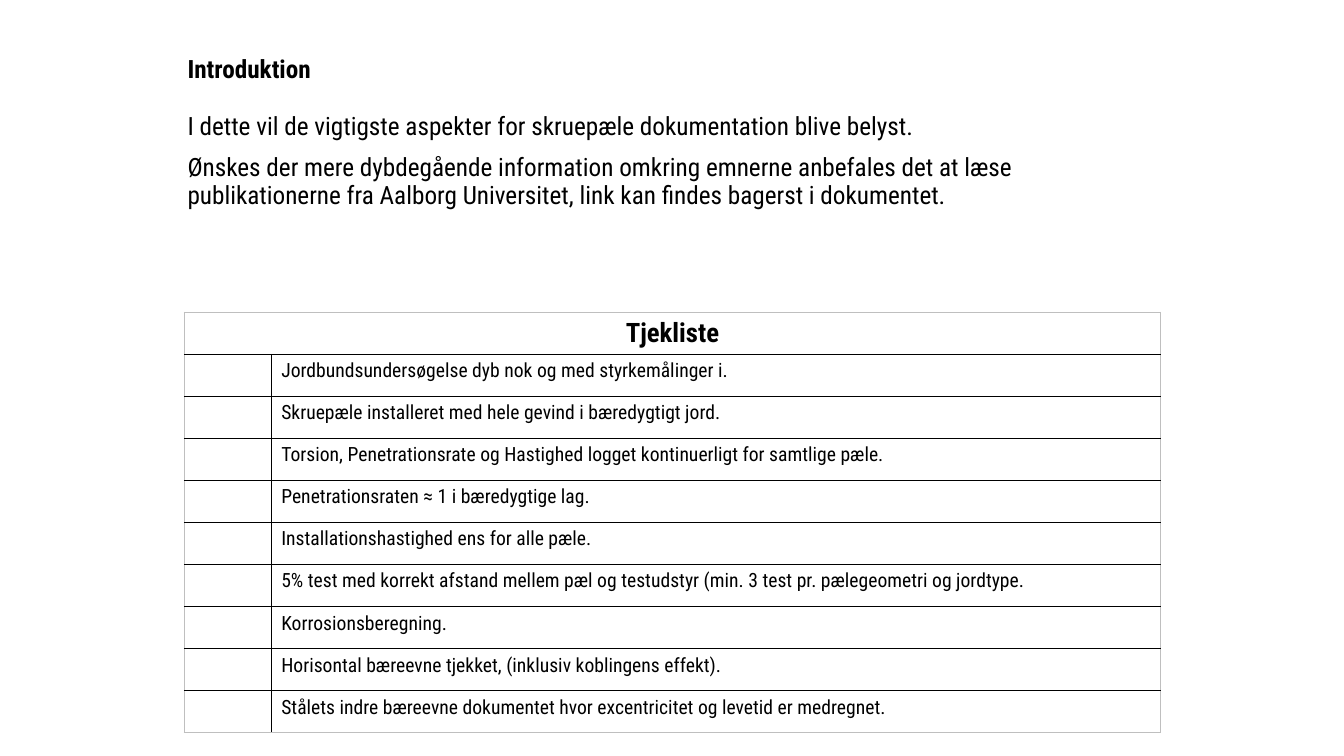
from lxml.etree import SubElement
from pptx import Presentation
from pptx.dml.color import RGBColor
from pptx.enum.text import MSO_ANCHOR, MSO_AUTO_SIZE, PP_ALIGN
from pptx.oxml.ns import qn
from pptx.util import Inches, Pt

BLACK = RGBColor(0x00, 0x00, 0x00)
WHITE = RGBColor(0xFF, 0xFF, 0xFF)
GRAY = RGBColor(0xBF, 0xBF, 0xBF)
FONT = "Roboto Condensed"

INTRODUCTION = [
    "I dette vil de vigtigste aspekter for skruepæle dokumentation blive belyst.",
    "Ønskes der mere dybdegående information omkring emnerne anbefales det at læse "
    "publikationerne fra Aalborg Universitet, link kan findes bagerst i dokumentet.",
]
CHECKS = [
    "Jordbundsundersøgelse dyb nok og med styrkemålinger i.",
    "Skruepæle installeret med hele gevind i bæredygtigt jord.",
    "Torsion, Penetrationsrate og Hastighed logget kontinuerligt for samtlige pæle.",
    "Penetrationsraten ≈ 1 i bæredygtige lag.",
    "Installationshastighed ens for alle pæle.",
    "5% test med korrekt afstand mellem pæl og testudstyr "
    "(min. 3 test pr. pælegeometri og jordtype.",
    "Korrosionsberegning.",
    "Horisontal bæreevne tjekket, (inklusiv koblingens effekt).",
    "Stålets indre bæreevne dokumentet hvor excentricitet og levetid er medregnet.",
]


def add_span(paragraph, text, size, bold=False):
    span = paragraph.add_run()
    span.text = text
    span.font.name = FONT
    span.font.size = Pt(size)
    span.font.bold = bold
    span.font.color.rgb = BLACK


def place(shape, left, top, width, height):
    shape.left, shape.top, shape.width, shape.height = left, top, width, height
    frame = shape.text_frame
    frame.word_wrap = True
    frame.auto_size = MSO_AUTO_SIZE.NONE
    frame.vertical_anchor = MSO_ANCHOR.TOP
    return frame


def fill_title(title, *box):
    paragraph = place(title, *box).paragraphs[0]
    paragraph.alignment = PP_ALIGN.LEFT
    add_span(paragraph, "Introduktion", 18, bold=True)


def fill_body(body, *box):
    frame = place(body, *box)
    for index, text in enumerate(INTRODUCTION):
        paragraph = frame.add_paragraph() if index else frame.paragraphs[0]
        properties = paragraph._p.get_or_add_pPr()
        properties.set("marL", "0")
        properties.set("indent", "0")
        SubElement(properties, qn("a:buNone"))
        paragraph.line_spacing = 0.9
        paragraph.space_before = Pt(10 if index else 0)
        add_span(paragraph, text, 18)


def set_borders(cell, colors):
    """Draw the left, right, top and bottom borders in the given colours."""
    properties = cell._tc.get_or_add_tcPr()
    for index, (side, color) in enumerate(zip("LRTB", colors)):
        line = properties.makeelement(qn(f"a:ln{side}"), {"w": str(Pt(1))})
        fill = SubElement(line, qn("a:solidFill"))
        SubElement(fill, qn("a:srgbClr"), val=str(color))
        properties.insert(index, line)


def add_checklist(page, left, top, width, height):
    rows = len(CHECKS) + 1
    table = page.shapes.add_table(rows, 2, left, top, width, height).table
    table.first_row = table.horz_banding = False
    table.columns[0].width = Inches(0.86)
    table.columns[1].width = width - Inches(0.86)

    for row in range(rows):
        for column in range(2):
            cell = table.cell(row, column)
            cell.fill.solid()
            cell.fill.fore_color.rgb = WHITE
            set_borders(cell, [
                BLACK if column == 1 and row else GRAY,
                BLACK if column == 0 and row else GRAY,
                BLACK if row else GRAY,
                BLACK if row < rows - 1 else GRAY,
            ])

    heading = table.cell(0, 0)
    heading.merge(table.cell(0, 1))
    paragraph = heading.text_frame.paragraphs[0]
    paragraph.alignment = PP_ALIGN.CENTER
    add_span(paragraph, "Tjekliste", 19.1, bold=True)
    for row, text in enumerate(CHECKS, start=1):
        add_span(table.cell(row, 1).text_frame.paragraphs[0], text, 14)


def main():
    deck = Presentation()
    deck.slide_width, deck.slide_height = Inches(13.33), Inches(7.5)
    page = deck.slides.add_slide(deck.slide_layouts[1])
    left = Inches(1.76)
    fill_title(page.shapes.title, left, Inches(0.48), Inches(7.09), Inches(0.4))
    fill_body(page.placeholders[1], left, Inches(1.08), Inches(9.34), Inches(1.38))
    add_checklist(page, Inches(1.83), Inches(3.1), Inches(9.68), Inches(4.17))
    deck.save("out.pptx")


if __name__ == "__main__":
    main()
